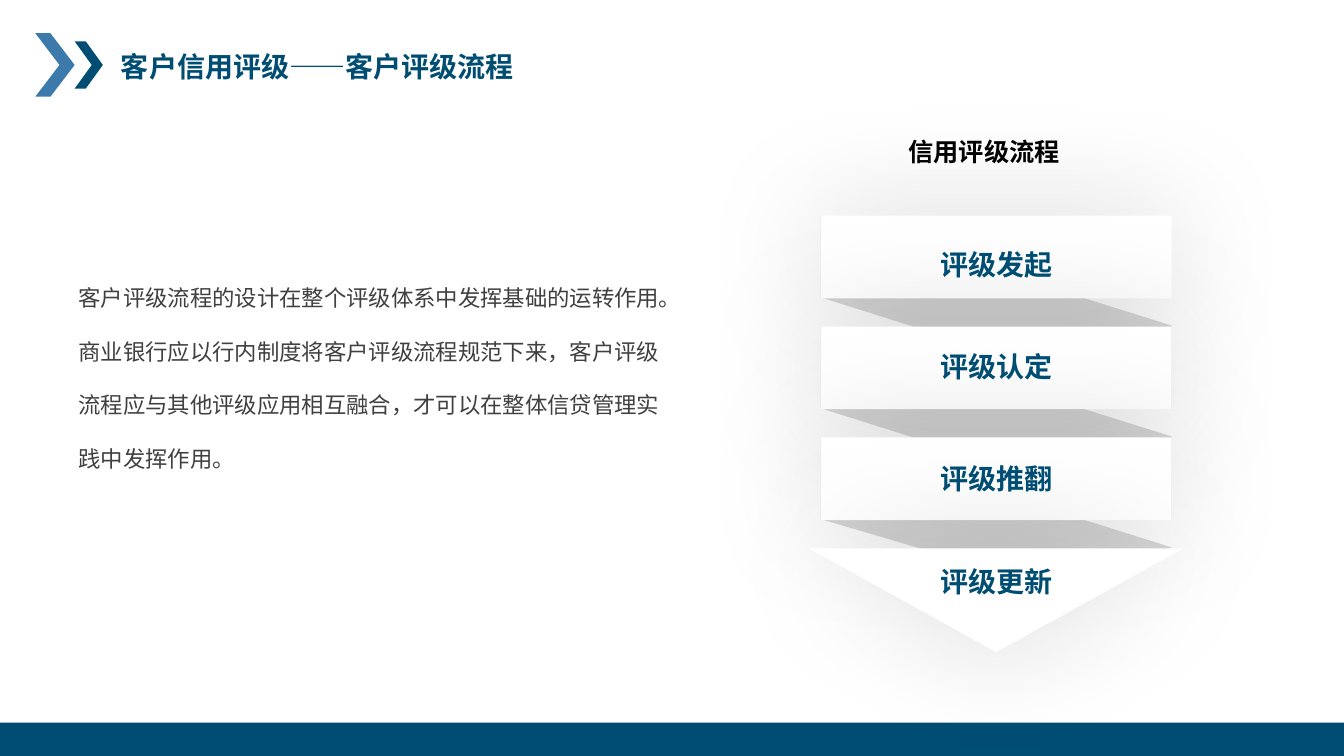
from lxml import etree
from pptx import Presentation
from pptx.dml.color import RGBColor
from pptx.enum.shapes import MSO_SHAPE
from pptx.enum.text import MSO_ANCHOR, MSO_AUTO_SIZE, PP_ALIGN
from pptx.oxml import parse_xml
from pptx.oxml.ns import nsdecls, qn
from pptx.util import Inches, Pt

RECTANGLE = MSO_SHAPE.RECTANGLE
TRIANGLE = MSO_SHAPE.ISOSCELES_TRIANGLE
TOP = MSO_ANCHOR.TOP
NO_AUTOFIT = MSO_AUTO_SIZE.NONE
LEFT, CENTER = PP_ALIGN.LEFT, PP_ALIGN.CENTER

NAVY = RGBColor(0x00, 0x4D, 0x73)
BLUE = RGBColor(0x3C, 0x7A, 0xAB)
FOLD_GRAY = RGBColor(0xD9, 0xD9, 0xD9)
TEXT_GRAY = RGBColor(0x40, 0x40, 0x40)
BLACK = RGBColor(0, 0, 0)
WHITE = RGBColor(0xFF, 0xFF, 0xFF)
FONT = "Noto Sans CJK SC"

STEPS = [("评级发起", 0.27), ("评级认定", 0.18), ("评级推翻", 0.19), ("评级更新", 0.11)]
FOLD = [(0, 0), (3.48, 1.09), (3.48, 1.91), (0, 0.81)]
LAST_FOLD = [(0, 0), (3.48, 1.09), (2.62, 1.58), (0, 0.81)]
STEP_HEIGHT = 0.82
STEP_PITCH = 1.1


def paint(shape, color):
    """Give a shape a flat fill without line or shadow."""
    shape.fill.solid()
    shape.fill.fore_color.rgb = color
    shape.line.fill.background()
    shape.shadow.inherit = False


def add_glow_shadow(shape):
    """Add a wide soft shadow around a shape."""
    effects = shape.element.spPr.find(qn("a:effectLst"))
    effects.append(parse_xml(
        f'<a:outerShdw {nsdecls("a")} blurRad="{Pt(90)}" dist="0" dir="0" algn="ctr" '
        'rotWithShape="0"><a:srgbClr val="000000"><a:alpha val="15000"/></a:srgbClr>'
        '</a:outerShdw>'))


def add_polygon(slide, left, top, points, color):
    """Draw a filled outline with points relative to its top left corner."""
    corners = [(Inches(left + x), Inches(top + y)) for x, y in points]
    builder = slide.shapes.build_freeform(*corners[0], scale=1.0)
    builder.add_line_segments(corners[1:], close=True)
    paint(builder.convert_to_shape(), color)


def write(shape, text, size, color, bold=False, align=LEFT, wrap=True):
    """Write one formatted paragraph into a shape."""
    frame = shape.text_frame
    frame.word_wrap = wrap
    frame.auto_size = NO_AUTOFIT
    frame.vertical_anchor = TOP
    paragraph = frame.paragraphs[0]
    paragraph.alignment = align
    paragraph.space_before = Pt(0)
    run = paragraph.add_run()
    run.text = text
    run.font.name = FONT
    run.font.size = Pt(size)
    run.font.bold = bold
    run.font.color.rgb = color
    east_asian = etree.SubElement(run.font._element, qn("a:ea"))
    east_asian.set("typeface", FONT)
    return paragraph


def place(shape, left, top, width, height):
    """Move and size a shape in inches."""
    shape.left, shape.top = Inches(left), Inches(top)
    shape.width, shape.height = Inches(width), Inches(height)


def add_label(slide, text, size, color, left, top, width, height):
    """Add a bold centred label on one line."""
    label = slide.shapes.add_textbox(
        Inches(left), Inches(top), Inches(width), Inches(height))
    write(label, text, size, color, bold=True, align=CENTER, wrap=False)


def add_header(slide, left, top):
    """Place the two chevrons and the slide title."""
    for x, y, width, height, thickness, color in [
            (0, 0, 0.39, 0.63, 0.15, BLUE), (0.39, 0.08, 0.28, 0.47, 0.11, NAVY)]:
        chevron = [(0, 0), (thickness, 0), (width, height / 2),
                   (thickness, height), (0, height), (width - thickness, height / 2)]
        add_polygon(slide, left + x, top + y, chevron, color)
    title = slide.shapes.title
    place(title, left + 0.75, top + 0.11, 5.79, 0.44)
    write(title, "客户信用评级——客户评级流程", 20, NAVY, bold=True)


def add_footer(slide, top, width, height):
    """Draw the bar along the bottom edge."""
    bar = slide.shapes.add_shape(
        RECTANGLE, 0, Inches(top), Inches(width), Inches(height))
    paint(bar, NAVY)


def add_description(slide, left, top, width, height):
    """Place the explanatory paragraph."""
    body = slide.placeholders[1]
    place(body, left, top, width, height)
    paragraph = write(
        body,
        "客户评级流程的设计在整个评级体系中发挥基础的运转作用。"
        "商业银行应以行内制度将客户评级流程规范下来，客户评级流程应与其他评级应用相互融合，"
        "才可以在整体信贷管理实践中发挥作用。", 16, TEXT_GRAY)
    paragraph.line_spacing = 2.0
    properties = paragraph._p.get_or_add_pPr()
    properties.set("marL", "0")
    properties.set("indent", "0")
    etree.SubElement(properties, qn("a:buNone"))


def add_process(slide, left, top, width):
    """Draw the folded ribbon of rating steps ending in an arrowhead."""
    step_tops = [top + i * STEP_PITCH for i in range(len(STEPS))]
    for points, fold_top in zip([LAST_FOLD, FOLD, FOLD], step_tops[2::-1]):
        add_polygon(slide, left, fold_top, points, FOLD_GRAY)
    for step_top in step_tops[:-1]:
        step = slide.shapes.add_shape(
            RECTANGLE, Inches(left), Inches(step_top), Inches(width), Inches(STEP_HEIGHT))
        paint(step, WHITE)
        add_glow_shadow(step)
    arrowhead = slide.shapes.add_shape(
        TRIANGLE, Inches(left - 0.12), Inches(step_tops[-1]),
        Inches(width + 0.24), Inches(1.03))
    arrowhead.element.spPr.xfrm.set("flipV", "1")
    paint(arrowhead, WHITE)
    add_glow_shadow(arrowhead)
    for (name, offset), step_top in zip(STEPS, step_tops):
        add_label(slide, name, 20, NAVY,
                  left + (width - 1.32) / 2, step_top + offset, 1.32, 0.44)
    add_label(slide, "信用评级流程", 18, BLACK, left + 0.76, top - 0.84, 1.72, 0.4)


def main():
    """Build and save the slide."""
    presentation = Presentation()
    presentation.slide_width = Inches(13.33)
    presentation.slide_height = Inches(7.5)
    slide = presentation.slides.add_slide(presentation.slide_layouts[1])
    add_header(slide, 0.35, 0.33)
    add_footer(slide, 7.17, 13.33, 0.33)
    add_process(slide, 8.14, 2.14, 3.48)
    add_description(slide, 0.68, 2.5, 6.13, 2.17)
    presentation.save("out.pptx")


if __name__ == "__main__":
    main()
